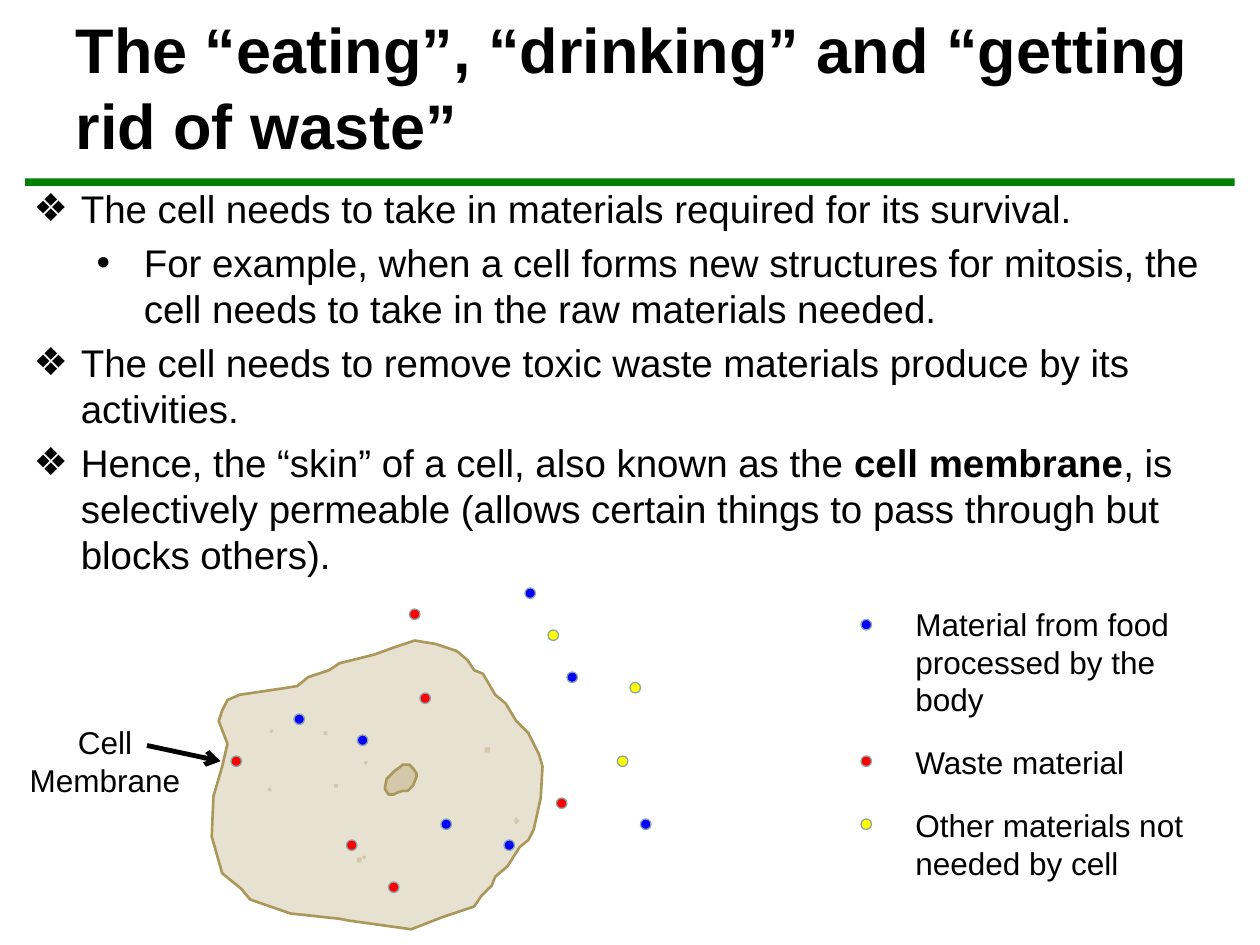
from math import cos, pi, sin

from lxml import etree
from pptx import Presentation
from pptx.dml.color import RGBColor
from pptx.enum import shapes, text
from pptx.oxml.ns import qn
from pptx.util import Pt

BLUE, RED, YELLOW = "0000FF", "FF0000", "FFFF00"
DOT = 6


def add_run(p, content, size=18, bold=False, color="000000"):
    r = p.add_run()
    r.text = content
    r.font.name = "Arial"
    r.font.size = Pt(size)
    r.font.bold = bold
    r.font.color.rgb = RGBColor.from_string(color)


def paint(sp, fill, line=None, width=0.75):
    sp.shadow.inherit = False
    sp.fill.solid()
    sp.fill.fore_color.rgb = RGBColor.from_string(fill)
    if line:
        sp.line.color.rgb = RGBColor.from_string(line)
        sp.line.width = Pt(width)
    else:
        sp.line.fill.background()


prs = Presentation()
prs.slide_width, prs.slide_height = Pt(720), Pt(540)
s = prs.slides.add_slide(prs.slide_layouts[1])

# Title
title = s.shapes.title
title.left, title.top, title.width, title.height = Pt(36), Pt(12), Pt(675), Pt(84)
tf = title.text_frame
tf.auto_size = text.MSO_AUTO_SIZE.NONE
tf.vertical_anchor = text.MSO_ANCHOR.BOTTOM
p = tf.paragraphs[0]
p.alignment = text.PP_ALIGN.LEFT
add_run(p, "The “eating”, “drinking” and “getting rid of waste”", size=36, bold=True)

# Bulleted list: level and runs; every second run is bold
items = [
    (0, ["The cell needs to take in materials required for its survival."]),
    (1, ["For example, when a cell forms new structures for mitosis, "
         "the cell needs to take in the raw materials needed."]),
    (0, ["The cell needs to remove toxic waste materials produce by its activities."]),
    (0, ["Hence, the “skin” of a cell, also known as the ", "cell membrane",
         ", is selectively permeable (allows certain things to pass through "
         "but blocks others)."]),
]
body = s.placeholders[1]
body.left, body.top, body.width, body.height = Pt(12), Pt(102), Pt(696), Pt(252)
tf = body.text_frame
tf.auto_size = text.MSO_AUTO_SIZE.NONE
for i, (level, runs) in enumerate(items):
    p = tf.paragraphs[0] if i == 0 else tf.add_paragraph()
    p.level = level
    p.space_before = Pt(4.4 if i else 0)
    pPr = p._p.get_or_add_pPr()
    pPr.set("marL", str(Pt(27 + 36 * level)))
    pPr.set("indent", str(Pt(-27)))
    etree.SubElement(pPr, qn("a:buChar")).set("char", "❖•"[level])
    for j, content in enumerate(runs):
        add_run(p, content, size=22, bold=j == 1)

# Green rule under the title
rule = s.shapes.add_shape(shapes.MSO_SHAPE.RECTANGLE, Pt(14.4), Pt(102), Pt(691.2), Pt(4.3))
paint(rule, "008000")

# Membrane label
label = s.shapes.add_shape(shapes.MSO_SHAPE.RECTANGLE, Pt(-6), Pt(408), Pt(132), Pt(54))
paint(label, "FFFFFF", "FFFFFF", 2)
tf = label.text_frame
tf.word_wrap = True
tf.vertical_anchor = text.MSO_ANCHOR.MIDDLE
p = tf.paragraphs[0]
p.alignment = text.PP_ALIGN.CENTER
add_run(p, "Cell Membrane")

# Cell: membrane, nucleus and specks
membrane = [
    (126.7, 406.1), (130.3, 399.6), (136.8, 397.4), (164.2, 393.1), (169.9, 391.7),
    (175.7, 387.4), (187.9, 383), (193.7, 378.7), (213.8, 374.4), (225.4, 370.1),
    (236.9, 365.8), (249.1, 367.9), (260.6, 372.2), (267.1, 376.6), (270.7, 383),
    (276.5, 385.2), (283, 397.4), (288.7, 401.8), (295, 411.5), (302.4, 419),
    (304.6, 424.8), (308, 431), (310.3, 437.8), (309, 456), (304.6, 473.8),
    (302.4, 480.2), (296.6, 483.8), (290, 494.6), (283, 501.1), (280.8, 506),
    (275, 511.9), (270.7, 517.7), (252.7, 524.2), (235.4, 530.6), (199.4, 526.3),
    (193.7, 524.8), (166.3, 522), (142.6, 514.1), (138.2, 507.6), (126.7, 499),
    (121, 478.1), (121.7, 455), (126.7, 437.8), (130.3, 424.8), (125.3, 411.8),
]
nucleus = [
    (229, 437.8), (224.6, 440.6), (221, 445), (219.6, 450), (219.6, 451.4),
    (221.8, 453.6), (225.4, 454.3), (226.8, 452.9), (229.7, 452.2), (232.6, 452.2),
    (235.4, 450), (236.2, 448.6), (237.6, 443.5), (237.6, 442.1), (236.2, 439.2),
    (234, 437), (230.4, 437),
]
# Speck centres and radius
specks = [(153.8, 451, 1), (208.1, 489.6, 1), (209.2, 435.6, 1), (186.1, 419, 1),
          (191.9, 448.9, 1), (155, 417.6, 1),
          (295.2, 469.1, 1.7), (205.2, 491.4, 1.7), (278.6, 428.4, 1.7)]
outlines = [(membrane, "E7E1D1", "AC975A"), (nucleus, "D3C8A9", "AC975A")]
for cx, cy, radius in specks:
    ring = [(cx + radius * cos(k * pi / 4), cy + radius * sin(k * pi / 4)) for k in range(8)]
    outlines.append((ring, "D3C8A9", None))
for points, fill, line in outlines:
    fb = s.shapes.build_freeform(*points[0], scale=Pt(1))
    fb.add_line_segments(points[1:], close=True)
    paint(fb.convert_to_shape(), fill, line, 1.5)

# Material dots, with the legend markers in the column at 492
dots = {
    BLUE: [(492, 354), (300, 336), (168, 408), (324, 384), (366, 468),
           (252, 468), (204.2, 420), (288, 480)],
    YELLOW: [(492, 468), (313.2, 360), (360, 390), (352.8, 432)],
    RED: [(492, 432), (132, 432), (198, 480), (240, 396), (222, 504),
          (318, 456), (234, 348)],
}
for color, places in dots.items():
    for x, y in places:
        dot = s.shapes.add_shape(shapes.MSO_SHAPE.OVAL, Pt(x), Pt(y), Pt(DOT), Pt(DOT))
        paint(dot, color, "8AA6A8")

# Legend texts
legend = [(342, 72.7, "Material from food processed by the body"),
          (421.2, 29, "Waste material"),
          (457.2, 51, "Other materials not needed by cell")]
for top, height, content in legend:
    tf = s.shapes.add_textbox(Pt(516), Pt(top), Pt(180), Pt(height)).text_frame
    tf.word_wrap = True
    tf.auto_size = text.MSO_AUTO_SIZE.SHAPE_TO_FIT_TEXT
    add_run(tf.paragraphs[0], content)

# Arrow from the label to the membrane
arrow = s.shapes.add_connector(shapes.MSO_CONNECTOR.STRAIGHT, Pt(84), Pt(426), Pt(126), Pt(435))
arrow.line.color.rgb = RGBColor.from_string("000000")
arrow.line.width = Pt(2.75)
etree.SubElement(arrow.line._get_or_add_ln(), qn("a:tailEnd")).set("type", "arrow")
etree.SubElement(arrow._element.spPr, qn("a:effectLst"))

prs.save("out.pptx")
